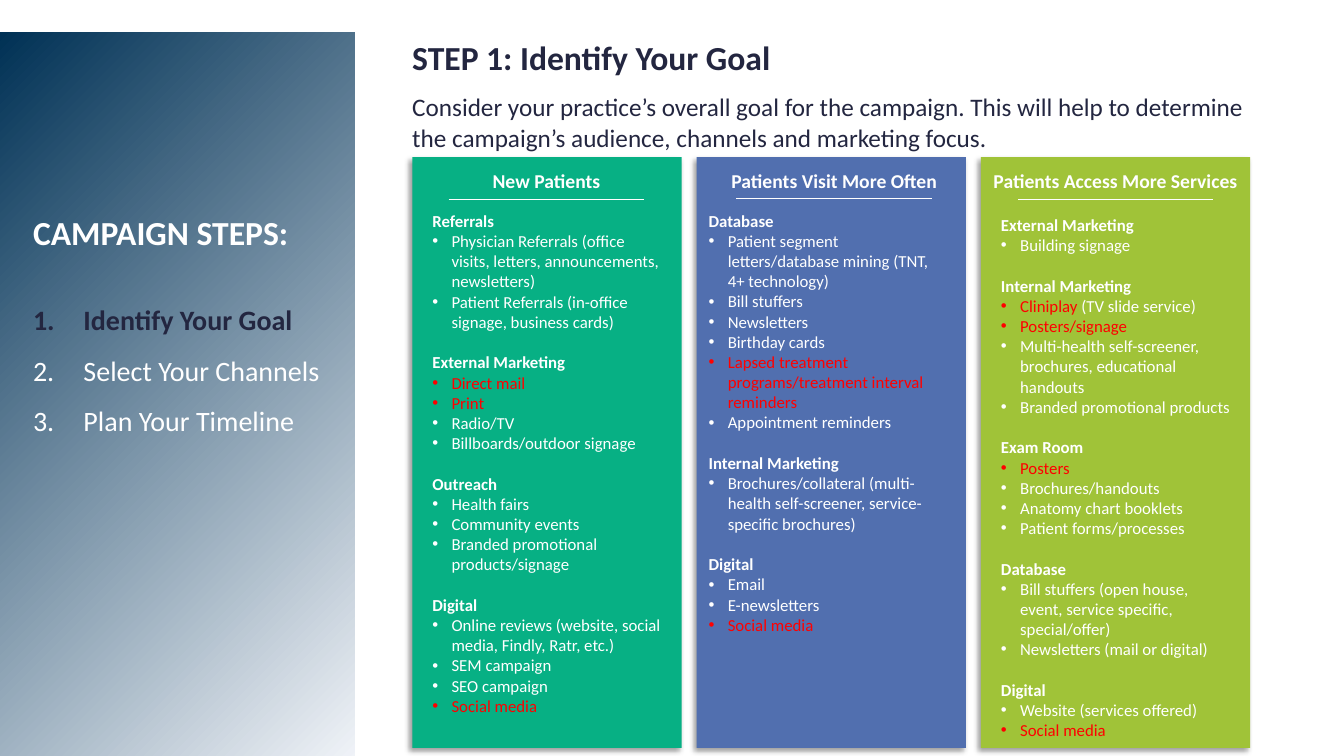
"""Build the campaign steps slide: a step sidebar and three goal columns."""
from lxml.etree import SubElement
from pptx import Presentation
from pptx.dml.color import RGBColor
from pptx.enum.shapes import MSO_CONNECTOR as CONN, MSO_SHAPE as SHAPE
from pptx.enum.text import MSO_AUTO_SIZE as AUTO, PP_ALIGN as ALIGN
from pptx.oxml.ns import qn
from pptx.util import Pt

PX = 9144
WHITE = RGBColor(0xFF, 0xFF, 0xFF)
INK = RGBColor(0x23, 0x26, 0x40)
RED = RGBColor(0xFF, 0x00, 0x00)
GREEN = RGBColor(0x07, 0xB0, 0x84)
BLUE = RGBColor(0x51, 0x6F, 0xAF)
LIME = RGBColor(0xA0, 0xC3, 0x38)
NAVY = RGBColor(0x00, 0x31, 0x55)
MIST = RGBColor(0xF6, 0xF8, 0xFC)

STEPS = ["Identify Your Goal", "Select Your Channels", "Plan Your Timeline"]

RED_TEXT = {
    "Direct mail", "Print", "Social media", "Cliniplay", "Posters/signage", "Posters",
    "Lapsed treatment programs/treatment interval reminders",
}

NEW_PATIENTS = [
    ("Referrals", [
        "Physician Referrals (office visits, letters, announcements, newsletters)",
        "Patient Referrals (in-office signage, business cards)"]),
    ("External Marketing", [
        "Direct mail", "Print", "Radio/TV", "Billboards/outdoor signage"]),
    ("Outreach", [
        "Health fairs", "Community events", "Branded promotional products/signage"]),
    ("Digital", [
        "Online reviews (website, social media, Findly, Ratr, etc.)",
        "SEM campaign", "SEO campaign", "Social media"]),
]
VISIT_MORE = [
    ("Database", [
        "Patient segment letters/database mining (TNT, 4+ technology)",
        "Bill stuffers", "Newsletters", "Birthday cards",
        "Lapsed treatment programs/treatment interval reminders",
        "Appointment reminders"]),
    ("Internal Marketing", [
        "Brochures/collateral (multi-health self-screener, service-specific brochures)"]),
    ("Digital", ["Email", "E-newsletters", "Social media"]),
]
MORE_SERVICES = [
    ("External Marketing", ["Building signage"]),
    ("Internal Marketing", [
        "Cliniplay| (TV slide service)", "Posters/signage",
        "Multi-health self-screener, brochures, educational handouts",
        "Branded promotional products"]),
    ("Exam Room", [
        "Posters", "Brochures/handouts", "Anatomy chart booklets",
        "Patient forms/processes"]),
    ("Database", [
        "Bill stuffers (open house, event, service specific, special/offer)",
        "Newsletters (mail or digital)"]),
    ("Digital", ["Website (services offered)", "Social media"]),
]

# title, colour, card x, title box, rule, body box, groups
COLUMNS = [
    ("New Patients", GREEN, 409, (438, 208), (445, 639, 198), (419, 204, 515), NEW_PATIENTS),
    ("Patients Visit More Often", BLUE, 691, (691, 273), (730, 924, 197), (693, 204, 434),
     VISIT_MORE),
    ("Patients Access More Services", LIME, 973, (973, 267), (1010, 1203, 198),
     (983, 208, 535), MORE_SERVICES),
]

prs = Presentation()
prs.slide_width, prs.slide_height = 1333 * PX, 750 * PX
s = prs.slides.add_slide(prs.slide_layouts[6])


def add_box(x, y, w, h):
    tf = s.shapes.add_textbox(x * PX, y * PX, w * PX, h * PX).text_frame
    tf.word_wrap = True
    tf.auto_size = AUTO.SHAPE_TO_FIT_TEXT
    return tf


def add_run(p, text, size, color, bold=False):
    r = p.add_run()
    r.text = text
    r.font.name = "Calibri"
    r.font.size = Pt(size)
    r.font.bold = bold
    r.font.color.rgb = color


panel = s.shapes.add_shape(SHAPE.RECTANGLE, 0, 32 * PX, 352 * PX, 750 * PX)
panel.shadow.inherit = False
panel.line.fill.background()
panel.fill.gradient()
panel.fill.gradient_angle = 315
for stop, color in zip(panel.fill.gradient_stops, (NAVY, MIST)):
    stop.color.rgb = color

tf = add_box(23, 205, 306, 230)
add_run(tf.paragraphs[0], "CAMPAIGN STEPS:", 24, WHITE, True)
for i, step in enumerate(STEPS):
    p = tf.add_paragraph()
    p.line_spacing = 1.5
    if i == 0:
        p.space_before = Pt(24.4)
    pPr = p._p.get_or_add_pPr()
    pPr.set("marL", str(50 * PX))
    pPr.set("indent", str(-50 * PX))
    SubElement(pPr, qn("a:buFont"), typeface="+mj-lt")
    SubElement(pPr, qn("a:buAutoNum"), type="arabicPeriod")
    add_run(p, step, 20, INK if i == 0 else WHITE, i == 0)

tf = add_box(399, 32, 911, 50)
add_run(tf.paragraphs[0], "STEP 1: Identify Your Goal", 24, INK, True)
tf = add_box(399, 86, 851, 71)
add_run(tf.paragraphs[0],
        "Consider your practice’s overall goal for the campaign. This will help to "
        "determine the campaign’s audience, channels and marketing focus.", 18, INK)

for title, fill, card_x, (title_x, title_w), (x1, x2, rule_y), body, groups in COLUMNS:
    card = s.shapes.add_shape(SHAPE.RECTANGLE, card_x * PX, 156 * PX, 267 * PX, 586 * PX)
    card.fill.solid()
    card.fill.fore_color.rgb = fill
    card.line.fill.background()
    card.shadow.inherit = False
    shadow = SubElement(card._element.spPr.find(qn("a:effectLst")), qn("a:outerShdw"),
                        blurRad="50800", dist="38100", dir="8100000", algn="tr",
                        rotWithShape="0")
    black = SubElement(shadow, qn("a:srgbClr"), val="000000")
    SubElement(black, qn("a:alpha"), val="40000")

    p = add_box(title_x, 163, title_w, 34).paragraphs[0]
    p.alignment = ALIGN.CENTER
    add_run(p, title, 14, WHITE, True)

    rule = s.shapes.add_connector(CONN.STRAIGHT, x1 * PX, rule_y * PX, x2 * PX, rule_y * PX)
    rule.line.color.rgb = WHITE
    rule.line.width = Pt(0.5)
    SubElement(rule._element.spPr, qn("a:effectLst"))

    body_x, body_y, body_h = body
    tf = add_box(body_x, body_y, 247, body_h)
    for i, (heading, bullets) in enumerate(groups):
        p = tf.add_paragraph() if i else tf.paragraphs[0]
        if i:
            p.space_before = Pt(14.65)
        add_run(p, heading, 12, WHITE, True)
        for bullet in bullets:
            p = tf.add_paragraph()
            pPr = p._p.get_or_add_pPr()
            pPr.set("marL", str(19 * PX))
            pPr.set("indent", str(-19 * PX))
            SubElement(pPr, qn("a:buFont"), typeface="Arial")
            SubElement(pPr, qn("a:buChar"), char="•")
            for text in bullet.split("|"):
                add_run(p, text, 12, RED if text in RED_TEXT else WHITE)

prs.save("out.pptx")
